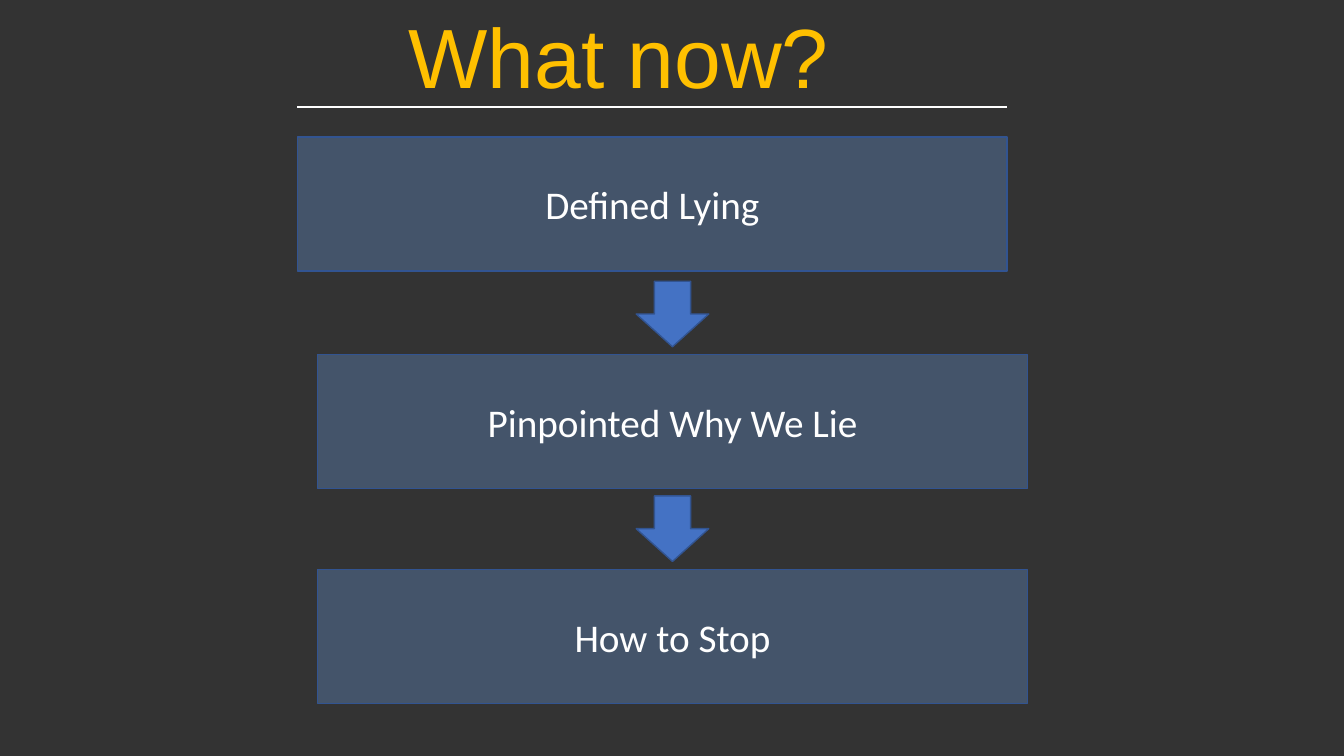
import pptx
import pptx.dml.color
import pptx.enum.shapes
import pptx.enum.text
import pptx.util
from lxml import etree

Inches = pptx.util.Inches
Points = pptx.util.Pt
Shapes = pptx.enum.shapes.MSO_SHAPE
Anchor = pptx.enum.text.MSO_ANCHOR
Align = pptx.enum.text.PP_ALIGN

# Content: each step with its left and top
TITLE = "What now?"
STEPS = [
    ("Defined Lying", 2.95, 1.36),
    ("Pinpointed Why We Lie", 3.15, 3.52),
    ("How to Stop", 3.15, 5.65),
]

# Layout and colours
STEP_WIDTH, STEP_HEIGHT = 7.04, 1.33
ARROW_LEFT, ARROW_WIDTH, ARROW_HEIGHT = 6.31, 0.72, 0.65
ARROW_RISE = 0.73  # from the top of an arrow to the top of the next step
RULE_TOP = 1.06
BACKGROUND, GOLD, WHITE = "333333", "FFC000", "FFFFFF"
SLATE, BLUE, OUTLINE = "44546A", "4472C4", "325491"


def color(value):
    return pptx.dml.color.RGBColor.from_string(value)


def write(shape, text, size, font, fill, align=Align.CENTER, anchor=Anchor.MIDDLE):
    frame = shape.text_frame
    frame.word_wrap = True
    frame.auto_size = pptx.enum.text.MSO_AUTO_SIZE.NONE
    frame.vertical_anchor = anchor
    para = frame.paragraphs[0]
    para.alignment = align
    span = para.add_run()
    span.text = text
    span.font.size = Points(size)
    span.font.name = font
    span.font.color.rgb = color(fill)


def add_block(page, kind, left, top, width, height, fill):
    block = page.shapes.add_shape(
        kind, Inches(left), Inches(top), Inches(width), Inches(height))
    block.shadow.inherit = False
    block.fill.solid()
    block.fill.fore_color.rgb = color(fill)
    block.line.color.rgb = color(OUTLINE)
    block.line.width = Points(1)
    return block


def main():
    deck = pptx.Presentation()
    deck.slide_width, deck.slide_height = Inches(13.33), Inches(7.5)
    page = deck.slides.add_slide(deck.slide_layouts[5])
    page.background.fill.solid()
    page.background.fill.fore_color.rgb = color(BACKGROUND)

    # Title
    title = page.shapes.title
    title.left, title.top = Inches(3.95), Inches(-0.01)
    title.width, title.height = Inches(5.44), Inches(1.11)
    write(title, TITLE, 60, "Arial", GOLD, align=Align.LEFT, anchor=Anchor.TOP)

    # Rule under the title, as wide as the first step
    rule_left = STEPS[0][1]
    rule = page.shapes.add_connector(
        pptx.enum.shapes.MSO_CONNECTOR.STRAIGHT,
        Inches(rule_left), Inches(RULE_TOP),
        Inches(rule_left + STEP_WIDTH), Inches(RULE_TOP))
    rule.line.color.rgb = color(WHITE)
    rule.line.width = Points(1.5)
    properties = rule._element.spPr
    etree.SubElement(properties, pptx.oxml.ns.qn("a:effectLst"))

    # Steps, with an arrow leading into each one after the first
    for index, (text, left, top) in enumerate(STEPS):
        if index:
            add_block(page, Shapes.DOWN_ARROW, ARROW_LEFT, top - ARROW_RISE,
                      ARROW_WIDTH, ARROW_HEIGHT, BLUE)
        step = add_block(page, Shapes.RECTANGLE, left, top,
                         STEP_WIDTH, STEP_HEIGHT, SLATE)
        write(step, text, 28, "Calibri", WHITE)

    deck.save("out.pptx")


if __name__ == "__main__":
    main()
